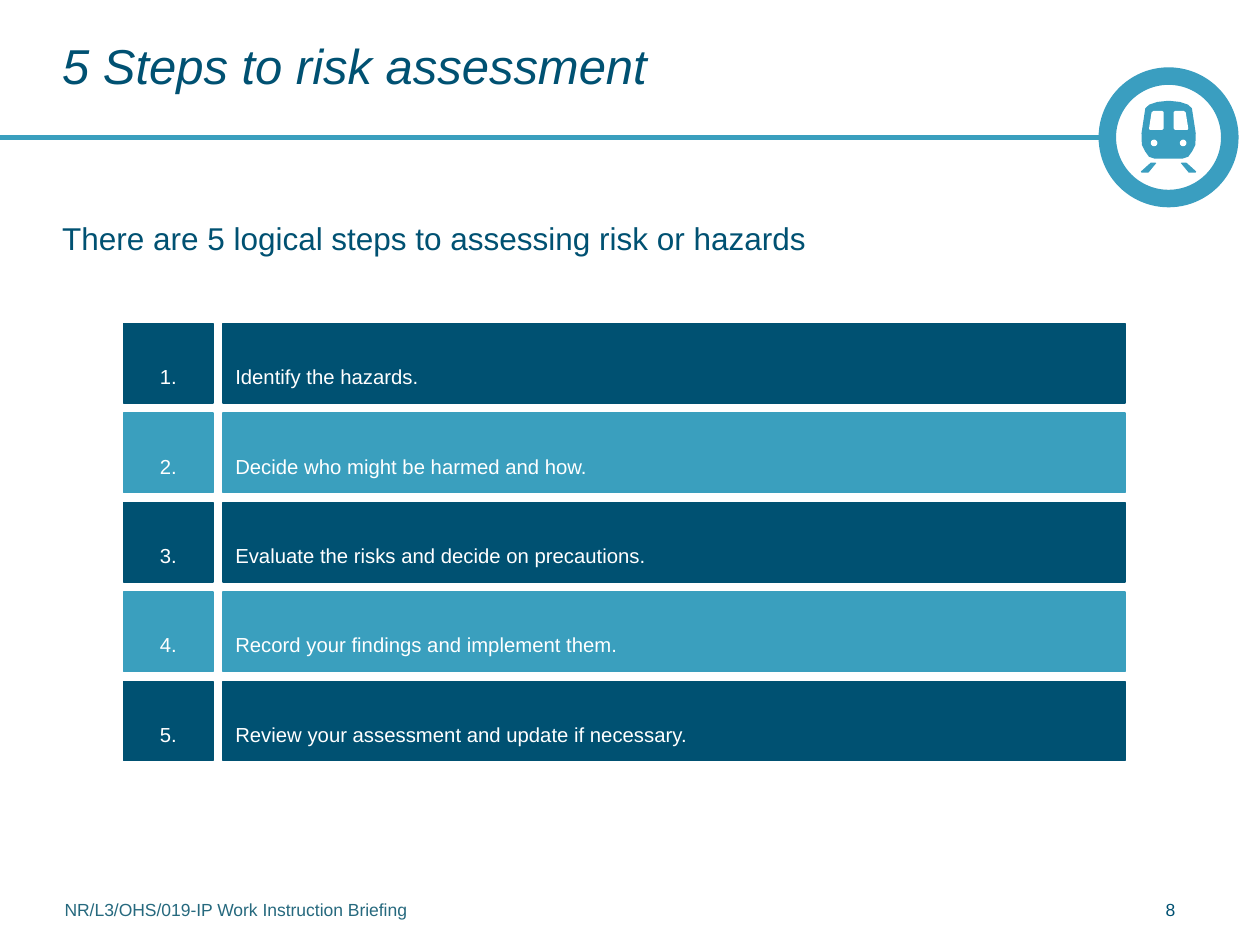
from lxml.etree import SubElement
from pptx import Presentation
from pptx.dml.color import RGBColor
from pptx.enum.shapes import MSO_CONNECTOR, MSO_SHAPE
from pptx.enum.text import MSO_ANCHOR, PP_ALIGN
from pptx.oxml.ns import qn
from pptx.util import Pt

NAVY, TEAL, WHITE, FOOTER_TEAL = "005172", "3A9FBE", "FFFFFF", "26697E"
ICON_TEAL = "3A9EC0"
STEPS = [
    "Identify the hazards.",
    "Decide who might be harmed and how.",
    "Evaluate the risks and decide on precautions.",
    "Record your findings and implement them.",
    "Review your assessment and update if necessary.",
]

# Step grid, in points
STEP_TOP, STEP_HEIGHT, STEP_PITCH = 185, 45.4, 51.1
NUMBER_LEFT, NUMBER_WIDTH = 70.6, 51.1
LABEL_LEFT, LABEL_WIDTH = 127.4, 515.5

# Train icon: left halves, as offsets from the centre line and slide heights
ICON_CENTRE = 667.8
BODY_HALF = [(0, 57.6), (-6.5, 58.3), (-11, 59.8), (-13.3, 61.9), (-15.5, 76.3),
             (-15.3, 82.8), (-13.5, 86.4), (-11.2, 89.6), (-7.9, 90.7), (0, 90.7)]
WINDOW = [(-2.9, 64), (-3.6, 63.4), (-8.6, 63.4), (-9.7, 64.1), (-11.2, 73.4),
          (-10.8, 74.2), (-3.6, 74.2), (-2.9, 73.4)]
RAIL = [(-7.6, 92.9), (-10.1, 92.9), (-15.8, 98), (-15.5, 98.6), (-11.5, 98.6), (-7, 93.2)]


def color(hex_string):
    return RGBColor.from_string(hex_string)


def paint(shape, fill, line=None):
    shape.shadow.inherit = False
    shape.fill.solid()
    shape.fill.fore_color.rgb = color(fill)
    if line:
        shape.line.color.rgb = color(line)
        shape.line.width = Pt(0.75)
    else:
        shape.line.fill.background()


def write(shape, text, size, font_color, insets=(0, 0, 0, 0), italic=False,
          anchor=MSO_ANCHOR.TOP, **paragraph_format):
    frame = shape.text_frame
    left, top, right, bottom = (Pt(inset) for inset in insets)
    frame_format = {"word_wrap": True, "vertical_anchor": anchor,
                    "margin_left": left, "margin_top": top,
                    "margin_right": right, "margin_bottom": bottom}
    paragraph = frame.paragraphs[0]
    run = paragraph.add_run()
    run.text = text
    font_format = {"name": "Arial", "size": Pt(size), "italic": italic}
    paragraph_format = {"alignment": PP_ALIGN.LEFT, **paragraph_format}
    for target, values in ((frame, frame_format), (paragraph, paragraph_format),
                           (run.font, font_format)):
        for name, value in values.items():
            setattr(target, name, value)
    run.font.color.rgb = color(font_color)
    return paragraph


def place(shape, left, top, width, height):
    for name, value in {"left": left, "top": top, "width": width, "height": height}.items():
        setattr(shape, name, Pt(value))


def add_preset(slide, kind, left, top, width, height, fill, line=None):
    shape = slide.shapes.add_shape(kind, Pt(left), Pt(top), Pt(width), Pt(height))
    paint(shape, fill, line)
    return shape


def add_outline(slide, points, fill):
    vertices = [(Pt(ICON_CENTRE + x), Pt(y)) for x, y in points]
    builder = slide.shapes.build_freeform(*vertices[0])
    builder.add_line_segments(vertices[1:], close=True)
    paint(builder.convert_to_shape(), fill)


def mirrored(points):
    return [(-x, y) for x, y in reversed(points)]


def add_header_rule(slide):
    rule = slide.shapes.add_connector(MSO_CONNECTOR.STRAIGHT, Pt(0), Pt(78.5), Pt(632), Pt(78.5))
    rule.line.color.rgb = color(TEAL)
    rule.line.width = Pt(3)
    SubElement(rule._element.spPr, qn("a:effectLst"))


def add_train_icon(slide):
    ring = add_preset(slide, MSO_SHAPE.DONUT, ICON_CENTRE - 40, 38.5, 80, 80, ICON_TEAL)
    ring.adjustments[0] = 0.125
    add_outline(slide, BODY_HALF + mirrored(BODY_HALF), ICON_TEAL)
    for points, fill in ((WINDOW, WHITE), (RAIL, ICON_TEAL)):
        add_outline(slide, points, fill)
        add_outline(slide, mirrored(points), fill)
    for offset in (-8.3, 8.3):
        add_preset(slide, MSO_SHAPE.OVAL, ICON_CENTRE + offset - 1.9, 79.8, 3.8, 3.8, WHITE)


def add_title(slide, text):
    title = slide.shapes.title
    place(title, 35.5, 14.4, 570, 50.4)
    write(title, text, 28, NAVY, italic=True, anchor=MSO_ANCHOR.MIDDLE, line_spacing=0.85)


def add_intro(slide, text):
    body = slide.placeholders[1]
    place(body, 35.5, 125.3, 649.5, 371.5)
    paragraph = write(body, text, 18, NAVY, space_before=Pt(2))
    # Plain paragraph: no bullet, no hanging indent
    properties = paragraph._p.get_or_add_pPr()
    properties.set("marL", "0")
    properties.set("indent", "0")
    SubElement(properties, qn("a:buNone"))


def add_step(slide, index, text):
    top = STEP_TOP + index * STEP_PITCH
    fill = TEAL if index % 2 else NAVY
    cells = ((LABEL_LEFT, LABEL_WIDTH, text, PP_ALIGN.LEFT),
             (NUMBER_LEFT, NUMBER_WIDTH, f"{index + 1}.", PP_ALIGN.CENTER))
    for left, width, words, alignment in cells:
        cell = add_preset(slide, MSO_SHAPE.RECTANGLE, left, top, width, STEP_HEIGHT, fill, fill)
        # The deep top inset sets the words below the middle of the bar
        write(cell, words, 11.6, WHITE, insets=(7.2, 18.5, 7.2, 3.6),
              anchor=MSO_ANCHOR.MIDDLE, alignment=alignment)


def add_footer(slide, left, width, text, font_color):
    box = slide.shapes.add_textbox(Pt(left), Pt(514), Pt(width), Pt(17.3))
    write(box, text, 10, font_color)


def main():
    presentation = Presentation()
    presentation.slide_width, presentation.slide_height = Pt(720), Pt(540)
    slide = presentation.slides.add_slide(presentation.slide_layouts[1])

    # Header
    add_header_rule(slide)
    add_train_icon(slide)
    add_title(slide, "5 Steps to risk assessment")

    # Content
    add_intro(slide, "There are 5 logical steps to assessing risk or hazards")
    for index, text in enumerate(STEPS):
        add_step(slide, index, text)

    # Footer
    add_footer(slide, 36.9, 622.8, "NR/L3/OHS/019-IP Work Instruction Briefing", FOOTER_TEAL)
    add_footer(slide, 666, 35.3, "8", NAVY)

    presentation.save("out.pptx")


if __name__ == "__main__":
    main()
